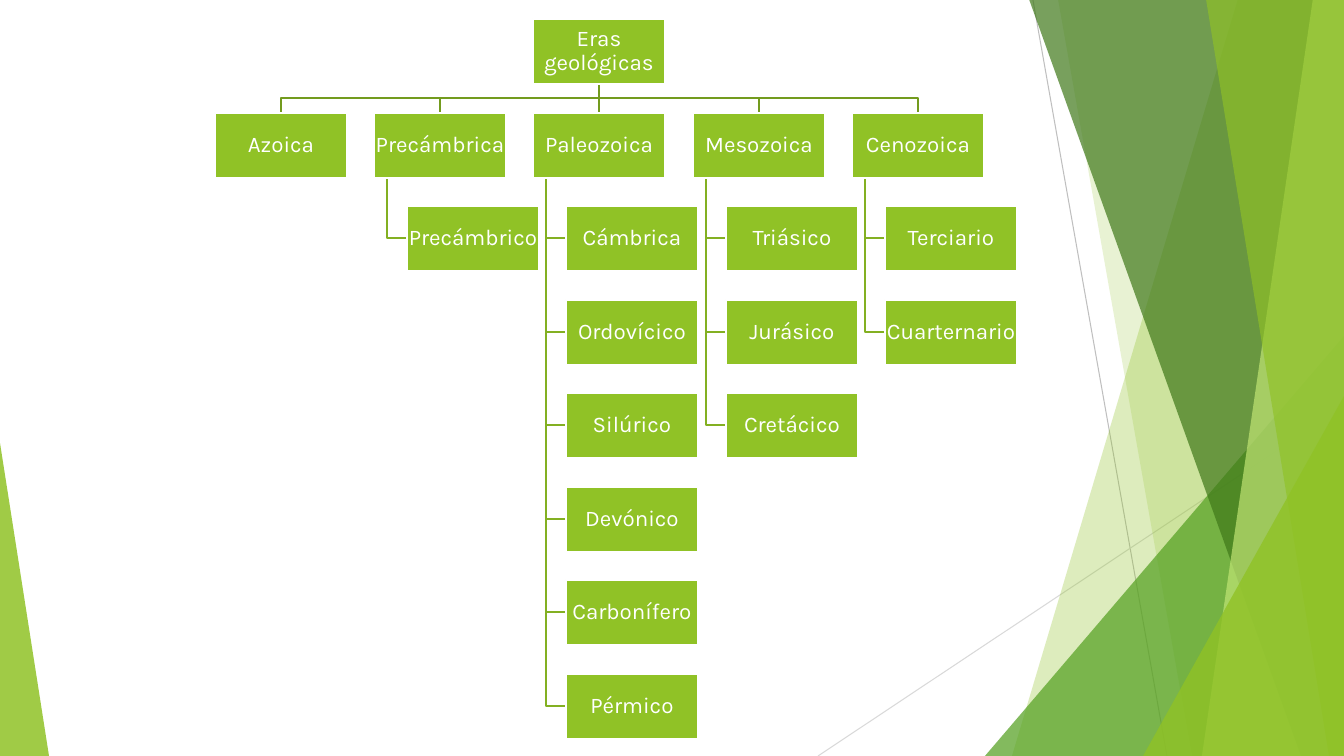
from lxml.etree import SubElement
from pptx import Presentation
from pptx.dml.color import RGBColor
from pptx.enum.shapes import MSO_CONNECTOR as Conn, MSO_SHAPE as Kind
from pptx.enum.text import MSO_ANCHOR as Anchor, PP_ALIGN as Align
from pptx.oxml.ns import qn
from pptx.util import Pt

ROOT = "Eras geológicas"
ERAS = [
    ("Azoica", []),
    ("Precámbrica", ["Precámbrico"]),
    ("Paleozoica", ["Cámbrica", "Ordovícico", "Silúrico", "Devónico", "Carbonífero", "Pérmico"]),
    ("Mesozoica", ["Triásico", "Jurásico", "Cretácico"]),
    ("Cenozoica", ["Terciario", "Cuarternario"]),
]
HEX = {
    "lime": "90C226", "green": "54A021", "dark": "3F7819", "pale": "C0E474",
    "bus": "739B1E", "branch": "83B022", "white": "FFFFFF",
    "gray": "BFBFBF", "light": "D9D9D9",
}
RAYS = [((1033, 0, 1167, 756), "gray"), ((1344, 406, 818, 756), "light")]
PANES = [
    ("band", (1238, 1012), "lime", 30),
    ("band", (1058, 1192), "lime", 20),
    ("wedge", (985, 336, 359, 420, 1), "green", 72),
    ("band", (1029, 1301), "dark", 70),
    ("band", (1313, 1202), "pale", 70),
    ("band", (1206, 1329), "lime", 65),
    ("wedge", (1143, 396, 201, 360, 1), "lime", 80),
    ("wedge", (0, 443, 49, 313, 0), "lime", 85),
]

WIDE, HIGH = 1344, 756
PX = 12192000 / WIDE
LEFT, TOP, SPAN, DROP = 215, 19, 637, 655
BOX_W, BOX_H = 132, 65
INDENT, SPINE = 33, 13
MID = len(ERAS) // 2


def emu(*nums):
    return [round(n * PX) for n in nums]


def color(name):
    return RGBColor.from_string(HEX[name])


def col_x(col):
    return LEFT + round(col * SPAN / (len(ERAS) - 1))


def row_y(row):
    return TOP + round(row * DROP / 7)


def outline(points, close):
    (x, y), *rest = points
    pen = shapes.build_freeform(x, y, scale=PX)
    pen.add_line_segments(rest, close=close)
    shape = pen.convert_to_shape()
    shape.shadow.inherit = False
    return shape


def line(ends, name, width):
    link = shapes.add_connector(Conn.STRAIGHT, *emu(*ends))
    link.line.color.rgb = color(name)
    link.line.width = Pt(width)
    SubElement(link.element.spPr, qn("a:effectLst"))
    return link


def pane(kind, dims, name, alpha):
    if kind == "band":
        top, base = dims
        shape = outline([(top, -1), (WIDE, -1), (WIDE, HIGH), (base, HIGH)], True)
    else:
        *rect, apex = dims
        shape = shapes.add_shape(Kind.ISOSCELES_TRIANGLE, *emu(*rect))
        shape.adjustments[0] = apex
        shape.shadow.inherit = False
    shape.fill.solid()
    shape.fill.fore_color.rgb = color(name)
    tint = shape.element.spPr.find(".//" + qn("a:srgbClr"))
    SubElement(tint, qn("a:alpha"), val=str(alpha * 1000))
    shape.line.fill.background()


def write(shape, text, size=16, font="Karla", ink="white", align=Align.CENTER):
    frame = shape.text_frame
    frame.word_wrap = True
    frame.vertical_anchor = Anchor.MIDDLE
    frame.margin_left = frame.margin_right = frame.margin_top = frame.margin_bottom = emu(1)[0]
    para = frame.paragraphs[0]
    para.alignment = align
    para.line_spacing = 0.9
    run = para.add_run()
    run.text = text
    run.font.size = Pt(size)
    run.font.name = font
    run.font.color.rgb = color(ink)


def box(text, x, y):
    shape = shapes.add_shape(Kind.RECTANGLE, *emu(x, y, BOX_W, BOX_H))
    shape.shadow.inherit = False
    shape.fill.solid()
    shape.fill.fore_color.rgb = color("lime")
    shape.line.color.rgb = color("white")
    shape.line.width = Pt(1.5)
    write(shape, text)
    return shape


def elbow(points, name):
    shape = outline(points, False)
    shape.fill.background()
    shape.line.color.rgb = color(name)
    shape.line.width = Pt(1.5)
    return shape


def era_link(era, col):
    start, end = col_x(MID) + BOX_W // 2, col_x(col) + BOX_W // 2
    y, low = row_y(0) + BOX_H, row_y(1)
    if col == MID:
        link = line((start, y, end, low), "bus", 1.5)
        link.begin_connect(root, 2)
        link.end_connect(era, 0)
        return link
    bus = (y + low) // 2
    return elbow([(start, y), (start, bus), (end, bus), (end, low)], "bus")


deck = Presentation()
deck.slide_width, deck.slide_height = emu(WIDE, HIGH)
shapes = deck.slides.add_slide(deck.slide_layouts[6]).shapes

for ends, name in RAYS:
    line(ends, name, 0.75)
for item in PANES:
    pane(*item)

root = box(ROOT, col_x(MID), row_y(0))
for col, (name, spans) in enumerate(ERAS):
    x = col_x(col)
    era = box(name, x, row_y(1))
    links = [era_link(era, col)]
    for row, label in enumerate(spans, 2):
        y = row_y(row)
        box(label, x + INDENT, y)
        spine, mid = x + SPINE, y + BOX_H // 2
        links.append(elbow([(spine, row_y(1) + BOX_H), (spine, mid), (x + INDENT, mid)], "branch"))
    for link in links:
        root.element.addprevious(link.element)

deck.save("out.pptx")
